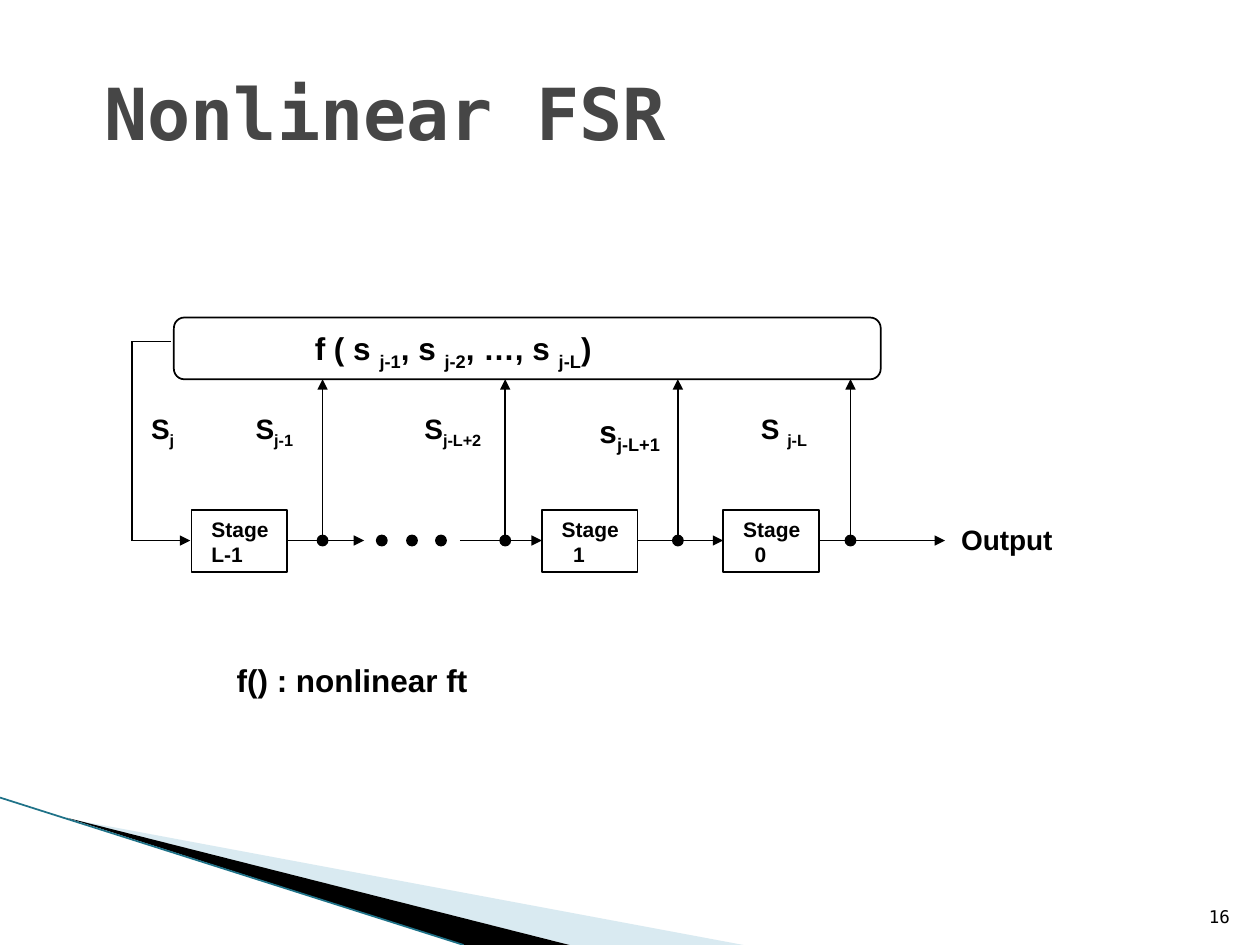
"""Build the slide that shows a nonlinear feedback shift register."""
import lxml.etree
import pptx
import pptx.dml.color
import pptx.enum.shapes
import pptx.enum.text
import pptx.oxml.ns
import pptx.util

COLUMNS = 100
WIDTH = pptx.util.Inches(10)
HEIGHT = pptx.util.Inches(7.5)
UNIT = WIDTH // COLUMNS
COLORS = {
    "ink": "000000",
    "title": "464646",
    "pale": "A0CBDC",
    "edge": "1F7288",
}
SHAPES = pptx.enum.shapes.MSO_SHAPE
ANCHOR = pptx.enum.text.MSO_ANCHOR
ALIGN = pptx.enum.text.PP_ALIGN
BODY_FONT = "Arial"
MONO_FONT = "DejaVu Sans Mono"

FUNCTION_BOTTOM = 30.1
STAGE_TOP = 40.5
STAGE_WIDTH = 7.6
STAGE_HEIGHT = 4.9
CAPTION_OFFSET = 0.6
SIGNAL = 42.9
FEEDBACK_TOP = 27.1
FEEDBACK_LEFT = 10.5
DOT = 0.8
STAGES = [(15.2, "L-1", 0), (43, "1", 0.9), (57.4, "0", 0.9)]
TAPS = [25.6, 40.1, 53.8, 67.5]
ELLIPSIS = [30.3, 32.7, 35]
SIGNALS = [(FEEDBACK_LEFT, 15.1), (22.8, 28.9), (36.5, 43), (50.6, 57.4), (65, 75)]
LABELS = [
    (11, 32.2, 3.9, 3.7, ["S", "j"], 16),
    (19.3, 32.2, 5.3, 3.7, ["S", "j-1"], 16),
    (32.7, 32.2, 7.1, 3.7, ["S", "j-L+2"], 16),
    (46.6, 32.2, 7.3, 4, ["s", "j-L+1"], 18),
    (59.4, 32.2, 7.9, 3.7, ["S ", "j-L"], 16),
    (75.3, 41, 9.3, 3.7, ["Output"], 16),
    (24, 25.6, 26.1, 4, ["f ( s ", "j-1", ", s ", "j-2", ", …, s ", "j-L", ")"], 18),
    (17.8, 52, 20.3, 4, ["f() : nonlinear ft"], 18),
]


def grid(*values):
    """Turn grid units into whole slide lengths."""
    return [pptx.util.Emu(round(value * UNIT)) for value in values]


def color(name):
    """Look up a named colour."""
    return pptx.dml.color.RGBColor.from_string(COLORS[name])


def style(font, size, name=BODY_FONT, ink="ink", bold=True):
    """Set the look of a run."""
    font.size = pptx.util.Pt(size)
    font.name = name
    font.bold = bold
    font.color.rgb = color(ink)


def add_box(slide, left, top, width, height, anchor=ANCHOR.TOP):
    """Add an empty text box and return its text frame."""
    box = slide.shapes.add_textbox(*grid(left, top, width, height))
    box.text_frame.word_wrap = False
    box.text_frame.vertical_anchor = anchor
    return box.text_frame


def add_label(slide, left, top, width, height, parts, size):
    """Add a label in which every second part is a subscript."""
    paragraph = add_box(slide, left, top, width, height).paragraphs[0]
    for index, part in enumerate(parts):
        run = paragraph.add_run()
        run.text = part
        style(run.font, size)
        if index % 2:
            run.font._element.set("baseline", "-25000")


def add_mono(slide, area, text, size, ink, bold, anchor, align):
    """Add a line of monospaced text."""
    text_frame = add_box(slide, *area, anchor)
    text_frame.text = text
    paragraph = text_frame.paragraphs[0]
    paragraph.alignment = align
    style(paragraph.runs[0].font, size, MONO_FONT, ink, bold)


def add_outline(slide, kind, left, top, width, height, filled=False):
    """Add a preset shape with a thin black outline."""
    shape = slide.shapes.add_shape(kind, *grid(left, top, width, height))
    shape.shadow.inherit = False
    if filled:
        shape.fill.solid()
        shape.fill.fore_color.rgb = color("ink")
    else:
        shape.fill.background()
    shape.line.color.rgb = color("ink")
    shape.line.width = pptx.util.Pt(1)
    return shape


def add_line(slide, start, end, arrow=True, ink="ink"):
    """Add a straight line, with an arrowhead if wanted."""
    connector = slide.shapes.add_connector(
        pptx.enum.shapes.MSO_CONNECTOR.STRAIGHT, *grid(*start, *end))
    connector.line.color.rgb = color(ink)
    connector.line.width = pptx.util.Pt(1)
    if arrow:
        line = connector.line._get_or_add_ln()
        lxml.etree.SubElement(line, pptx.oxml.ns.qn("a:tailEnd"), type="triangle")
    lxml.etree.SubElement(connector._element.spPr, pptx.oxml.ns.qn("a:effectLst"))


def add_wedge(slide, points, ink, opacity=100):
    """Add a filled triangle without an outline."""
    corners = [grid(*point) for point in points]
    builder = slide.shapes.build_freeform(*corners[0], scale=1.0)
    builder.add_line_segments(corners[1:], close=True)
    shape = builder.convert_to_shape()
    shape.shadow.inherit = False
    shape.fill.solid()
    shape.fill.fore_color.rgb = color(ink)
    shape.line.fill.background()
    if opacity < 100:
        fill = shape._element.spPr.find(pptx.oxml.ns.qn("a:solidFill"))
        lxml.etree.SubElement(
            fill[0], pptx.oxml.ns.qn("a:alpha"), val=str(opacity * 1000))


def add_stage(slide, left, name, indent):
    """Add one register stage with its two-line caption."""
    add_outline(slide, SHAPES.RECTANGLE, left, STAGE_TOP, STAGE_WIDTH, STAGE_HEIGHT)
    text_frame = add_box(slide, left + CAPTION_OFFSET, STAGE_TOP,
                         STAGE_WIDTH - CAPTION_OFFSET, STAGE_HEIGHT)
    text_frame.margin_right = 0
    text_frame.text = "Stage\n" + name
    for paragraph in text_frame.paragraphs:
        paragraph.alignment = ALIGN.LEFT
        style(paragraph.runs[0].font, 12)
    if indent:
        properties = text_frame.paragraphs[1]._p.get_or_add_pPr()
        properties.set("marL", str(grid(indent)[0]))
    text_frame.word_wrap = True


def add_dot(slide, center):
    """Add a black dot on the signal row."""
    add_outline(slide, SHAPES.FLOWCHART_CONNECTOR, center - DOT / 2,
                SIGNAL - DOT / 2, DOT, DOT, filled=True)


def add_decoration(slide):
    """Add the wedges in the lower left corner."""
    add_wedge(slide, [(5.5, 65), (59, 75), (45.2, 75)], "pale", 40)
    add_wedge(slide, [(5.3, 64.9), (45.2, 75), (36.8, 75)], "ink")
    add_line(slide, (0, 63.3), (36.8, 75), arrow=False, ink="edge")


def add_register(slide):
    """Add the stages, the feedback function and the wires between them."""
    for stage in STAGES:
        add_stage(slide, *stage)
    for start, end in SIGNALS:
        add_line(slide, (start, SIGNAL), (end, SIGNAL))
    corner = (FEEDBACK_LEFT, FEEDBACK_TOP)
    add_line(slide, (FEEDBACK_LEFT, SIGNAL), corner, arrow=False)
    add_line(slide, corner, (13.6, FEEDBACK_TOP), arrow=False)
    function = add_outline(slide, SHAPES.ROUNDED_RECTANGLE, 13.8, 25.2, 56.1, 4.9)
    function.adjustments[0] = 0.17
    for tap in TAPS:
        add_line(slide, (tap, SIGNAL), (tap, FUNCTION_BOTTOM))
    for center in TAPS + ELLIPSIS:
        add_dot(slide, center)
    for label in LABELS:
        add_label(slide, *label)


def main():
    """Build and save the presentation."""
    presentation = pptx.Presentation()
    presentation.slide_width = WIDTH
    presentation.slide_height = HEIGHT
    slide = presentation.slides.add_slide(presentation.slide_layouts[6])
    add_decoration(slide)
    add_mono(slide, (94.6, 70.1, 4, 4), "16", 10, "ink", False,
             ANCHOR.BOTTOM, ALIGN.RIGHT)
    add_mono(slide, (7.3, 2.6, 85, 12.5), "Nonlinear FSR", 41, "title", True,
             ANCHOR.MIDDLE, ALIGN.LEFT)
    add_register(slide)
    presentation.save("out.pptx")


if __name__ == "__main__":
    main()
